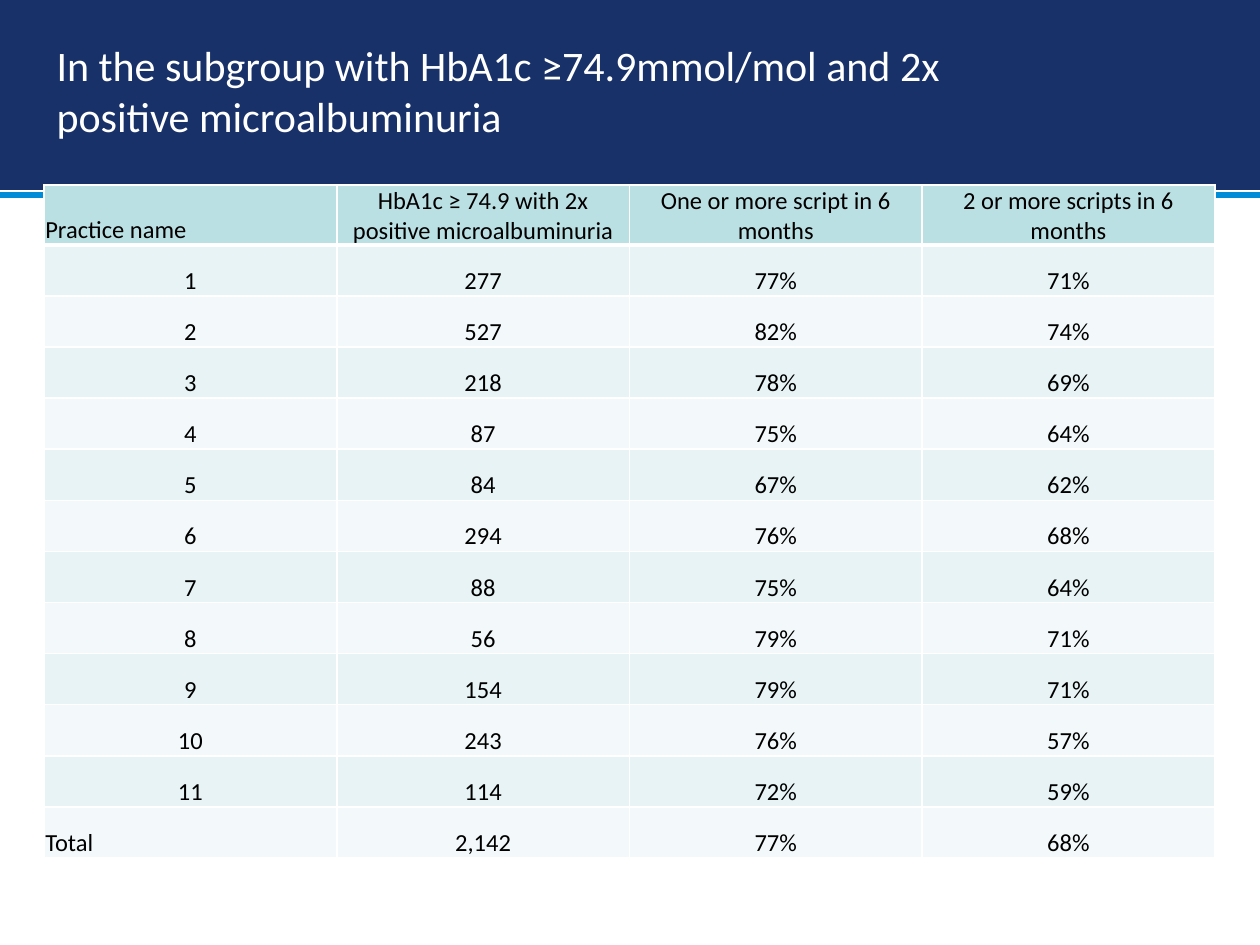
from dataclasses import dataclass

from lxml.etree import SubElement
from pptx import Presentation
from pptx.dml.color import RGBColor
from pptx.enum.shapes import MSO_CONNECTOR, MSO_SHAPE
from pptx.enum.text import MSO_ANCHOR, PP_ALIGN
from pptx.oxml.ns import qn
from pptx.util import Pt

COLORS = {
    "navy": "183169",
    "blue": "008CD6",
    "white": "FFFFFF",
    "black": "000000",
    "header": "BBE0E3",
    "band_dark": "E7F3F4",
    "band_light": "F3F9FA",
}
SLIDE_WIDTH, SLIDE_HEIGHT = 720, 540
COLUMN_WIDTH = 167.25
HEADER_HEIGHT, ROW_HEIGHT = 34.1, 29.2
TABLE_LEFT, TABLE_TOP = 25.2, 105.6


@dataclass(frozen=True)
class PracticeRow:
    practice: str
    patients: str
    one_script: str
    two_scripts: str

    def values(self) -> tuple[str, ...]:
        return self.practice, self.patients, self.one_script, self.two_scripts


HEADINGS = PracticeRow(
    "Practice name",
    "HbA1c ≥ 74.9 with 2x positive microalbuminuria",
    "One or more script in 6 months",
    "2 or more scripts in 6 months",
)
PRACTICES = [
    PracticeRow("1", "277", "77%", "71%"),
    PracticeRow("2", "527", "82%", "74%"),
    PracticeRow("3", "218", "78%", "69%"),
    PracticeRow("4", "87", "75%", "64%"),
    PracticeRow("5", "84", "67%", "62%"),
    PracticeRow("6", "294", "76%", "68%"),
    PracticeRow("7", "88", "75%", "64%"),
    PracticeRow("8", "56", "79%", "71%"),
    PracticeRow("9", "154", "79%", "71%"),
    PracticeRow("10", "243", "76%", "57%"),
    PracticeRow("11", "114", "72%", "59%"),
    PracticeRow("Total", "2,142", "77%", "68%"),
]


def rgb(name: str) -> RGBColor:
    return RGBColor.from_string(COLORS[name])


def write_text(frame, text: str, *, size: float, color: str, align=PP_ALIGN.LEFT) -> None:
    frame.word_wrap = True
    paragraph = frame.paragraphs[0]
    paragraph.alignment = align
    run = paragraph.add_run()
    run.text = text
    run.font.name = "Calibri"
    run.font.size = Pt(size)
    run.font.bold = False
    run.font.color.rgb = rgb(color)


def set_borders(cell, top: float = 1, bottom: float = 1) -> None:
    properties = cell._tc.get_or_add_tcPr()
    for side, width in {"lnL": 1, "lnR": 1, "lnT": top, "lnB": bottom}.items():
        border = SubElement(properties, qn(f"a:{side}"), w=str(Pt(width)))
        fill = SubElement(border, qn("a:solidFill"))
        SubElement(fill, qn("a:srgbClr"), val=COLORS["white"])


def add_banner(slide) -> None:
    stripe = slide.shapes.add_connector(
        MSO_CONNECTOR.STRAIGHT, Pt(0), Pt(111.4), Pt(SLIDE_WIDTH), Pt(111.4)
    )
    stripe.line.color.rgb = rgb("blue")
    stripe.line.width = Pt(3)
    SubElement(stripe._element.spPr, qn("a:effectLst"))

    banner = slide.shapes.add_shape(
        MSO_SHAPE.RECTANGLE, Pt(0), Pt(0), Pt(SLIDE_WIDTH), Pt(107.3)
    )
    banner.shadow.inherit = False
    banner.fill.solid()
    banner.fill.fore_color.rgb = rgb("navy")
    banner.line.color.rgb = rgb("navy")
    banner.line.width = Pt(3)


def add_title(slide, text: str) -> None:
    title = slide.shapes.add_textbox(Pt(25.2), Pt(20.2), Pt(538.6), Pt(62.6))
    title.text_frame.vertical_anchor = MSO_ANCHOR.MIDDLE
    write_text(title.text_frame, text, size=24, color="white")


def add_practice_table(slide, rows: list[PracticeRow]) -> None:
    column_count = len(HEADINGS.values())
    table = slide.shapes.add_table(
        len(rows), column_count, Pt(TABLE_LEFT), Pt(TABLE_TOP),
        Pt(COLUMN_WIDTH * column_count),
        Pt(HEADER_HEIGHT + ROW_HEIGHT * (len(rows) - 1)),
    ).table
    table.first_row = False
    table.horz_banding = False
    for column in table.columns:
        column.width = Pt(COLUMN_WIDTH)
    for row_index, row in enumerate(rows):
        is_header = row_index == 0
        table.rows[row_index].height = Pt(HEADER_HEIGHT if is_header else ROW_HEIGHT)
        band = "band_dark" if row_index % 2 else "band_light"
        for column_index, value in enumerate(row.values()):
            cell = table.cell(row_index, column_index)
            cell.margin_left = cell.margin_right = cell.margin_top = Pt(0.7)
            cell.margin_bottom = Pt(0)
            cell.vertical_anchor = MSO_ANCHOR.BOTTOM
            set_borders(cell, top=3 if row_index == 1 else 1, bottom=3 if is_header else 1)
            cell.fill.solid()
            cell.fill.fore_color.rgb = rgb("header" if is_header else band)
            is_label = column_index == 0 and not value.isdigit()
            write_text(
                cell.text_frame, value, size=14, color="black",
                align=PP_ALIGN.LEFT if is_label else PP_ALIGN.CENTER,
            )


def main() -> None:
    presentation = Presentation()
    presentation.slide_width = Pt(SLIDE_WIDTH)
    presentation.slide_height = Pt(SLIDE_HEIGHT)
    slide = presentation.slides.add_slide(presentation.slide_layouts[6])
    add_banner(slide)
    add_title(slide, "In the subgroup with HbA1c ≥74.9mmol/mol and 2x positive microalbuminuria")
    add_practice_table(slide, [HEADINGS, *PRACTICES])
    presentation.save("out.pptx")


if __name__ == "__main__":
    main()
